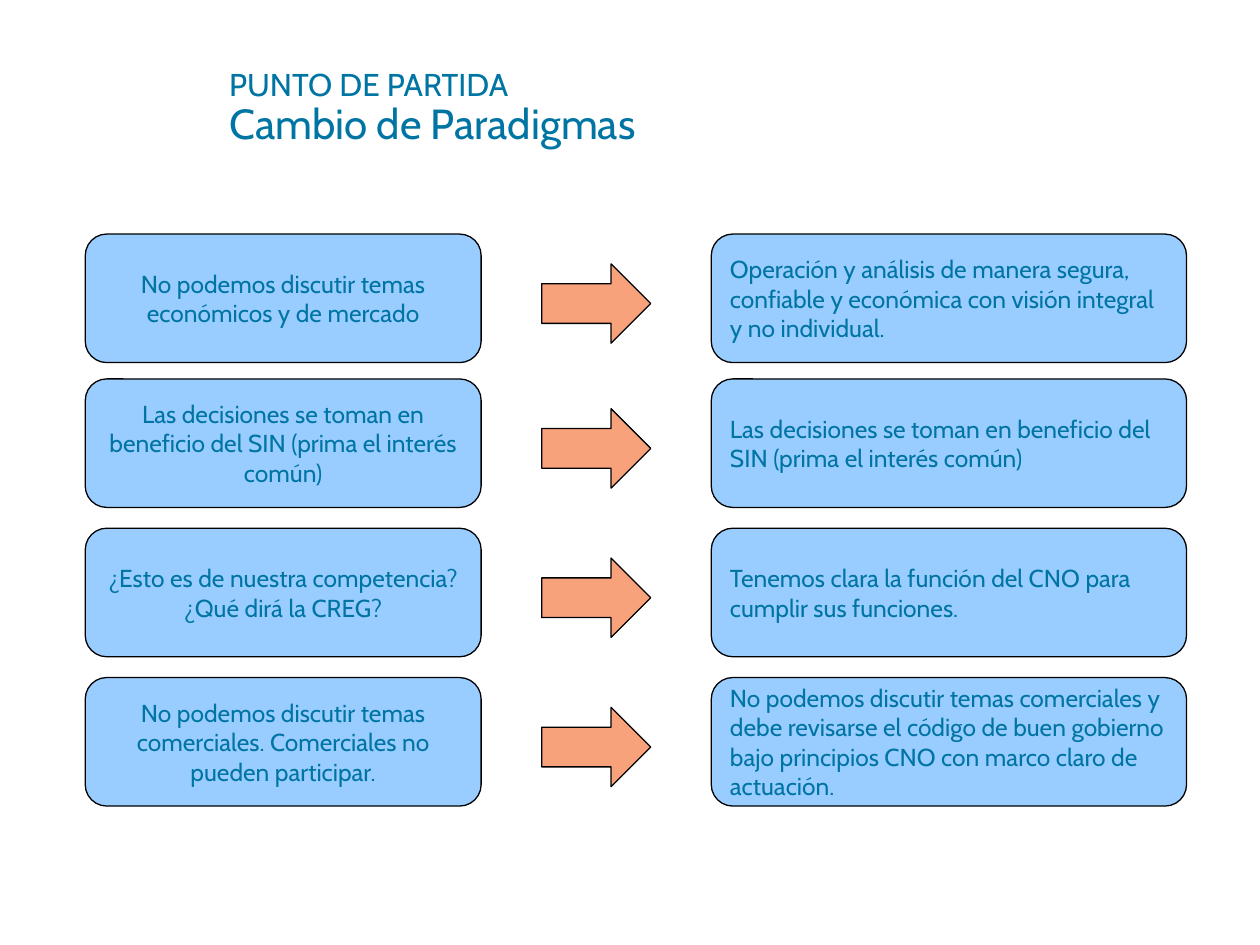
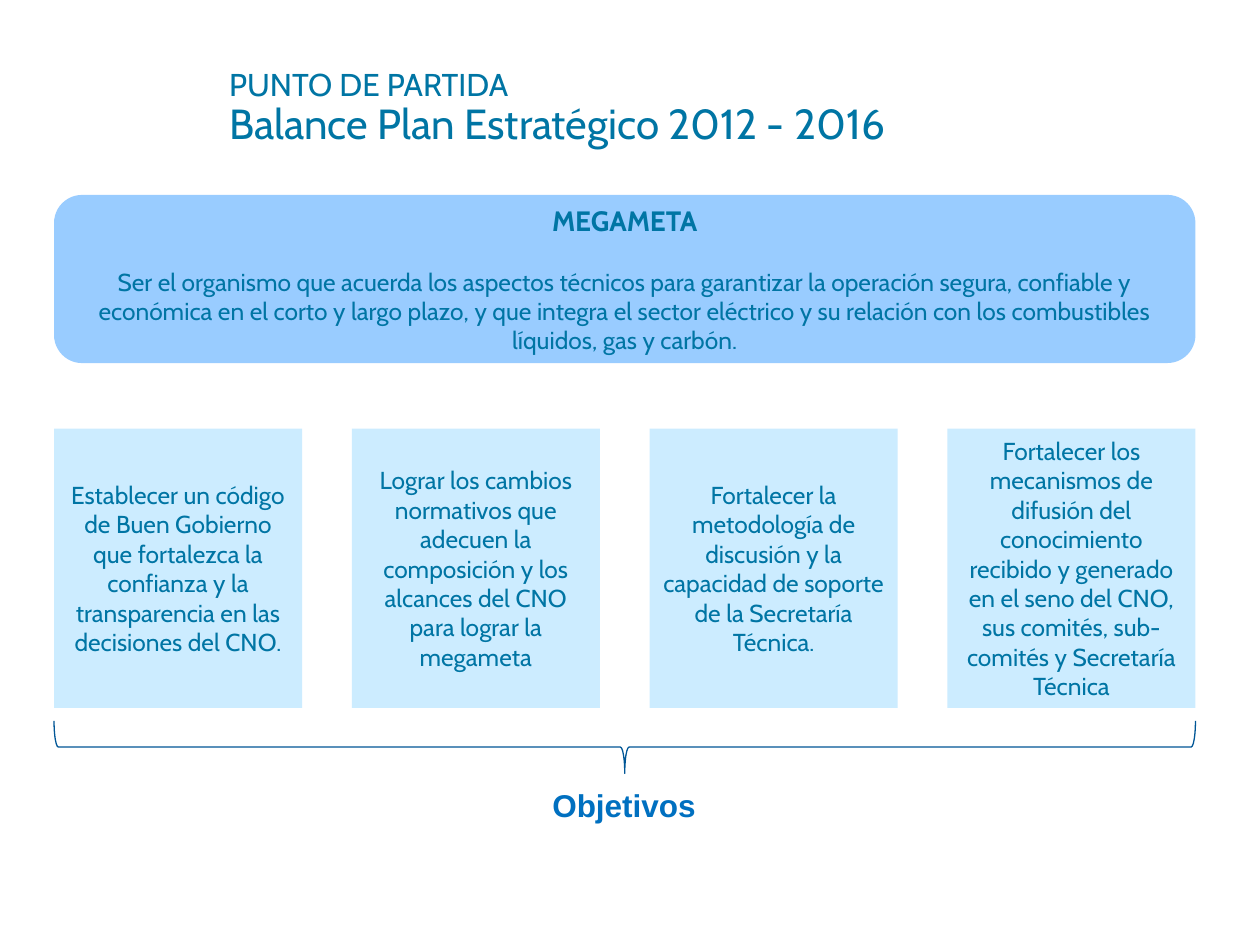
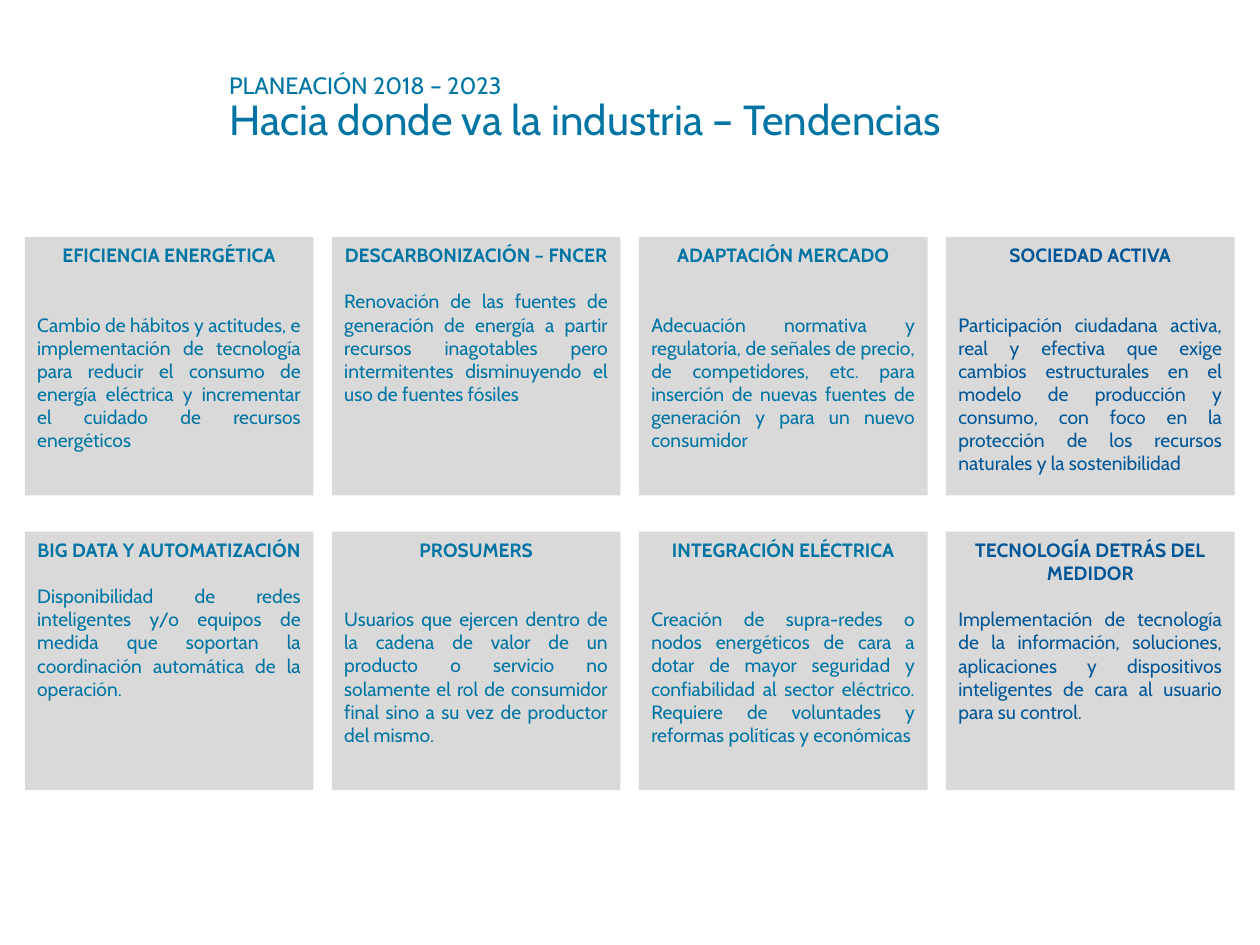
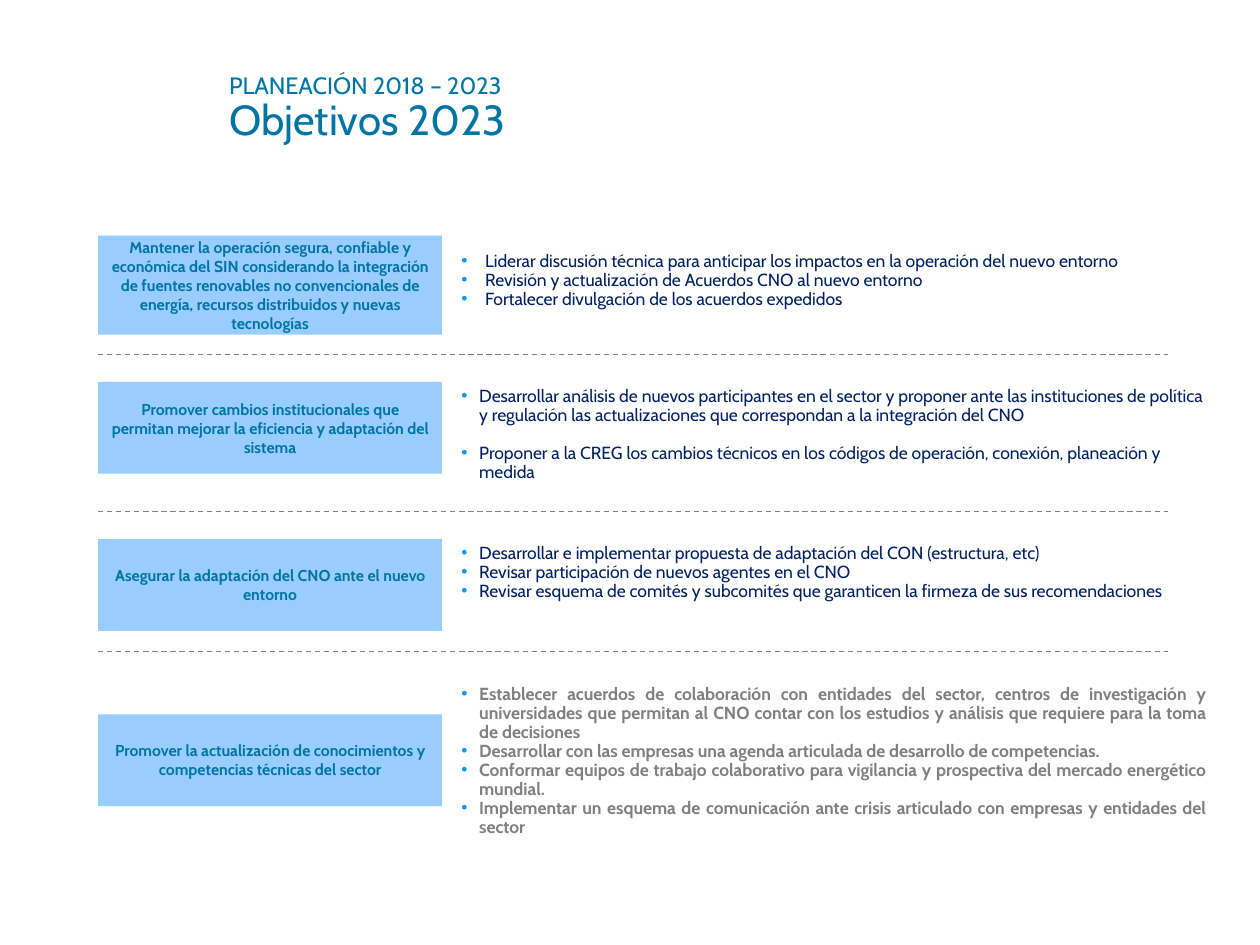
from dataclasses import dataclass

import pptx
import pptx.dml.color
import pptx.enum.dml
import pptx.enum.shapes
import pptx.enum.text
import pptx.oxml.ns
import pptx.util
from lxml import etree

Cm, Pt = pptx.util.Cm, pptx.util.Pt
SHAPES = pptx.enum.shapes.MSO_SHAPE
ANCHOR = pptx.enum.text.MSO_ANCHOR
ALIGN = pptx.enum.text.PP_ALIGN

# Shared look
FONT = "Cabin"
TEAL, BLUE, NAVY, GRAY = "0075A4", "005696", "002060", "808080"
SKY, PALE, SILVER, SALMON = "99CCFF", "CCECFF", "D9D9D9", "F8A27C"
TITLE_ONLY, FOUR_BODIES = 5, 4


@dataclass
class Box:
    """A region of the slide, in centimetres."""
    left: float
    top: float
    width: float
    height: float

    def lengths(self):
        return Cm(self.left), Cm(self.top), Cm(self.width), Cm(self.height)


TITLE_BOX = Box(4.62, 1.07, 17.91, 2.26)


# Shared helpers
def color(hex_value):
    return pptx.dml.color.RGBColor.from_string(hex_value)


def add_bullet(paragraph, indent):
    properties = paragraph._p.get_or_add_pPr()
    properties.set("marL", str(Cm(indent)))
    properties.set("indent", str(-Cm(indent)))
    qn = pptx.oxml.ns.qn
    bullet_color = etree.SubElement(properties, qn("a:buClr"))
    etree.SubElement(bullet_color, qn("a:srgbClr"), val="0099FF")
    etree.SubElement(properties, qn("a:buFont"), typeface="Arial")
    etree.SubElement(properties, qn("a:buChar"), char="•")


def write(shape, *paragraphs, anchor=ANCHOR.MIDDLE, insets=(0.25, 0.13), wrap=True, **shared):
    """Fill a shape with paragraphs, each a text or a (text, own format) pair."""
    frame = shape.text_frame
    frame.auto_size = pptx.enum.text.MSO_AUTO_SIZE.NONE
    frame.word_wrap = wrap
    frame.vertical_anchor = anchor
    frame.margin_left = frame.margin_right = Cm(insets[0])
    frame.margin_top = frame.margin_bottom = Cm(insets[1])
    for number, item in enumerate(paragraphs):
        text, own = (item, {}) if isinstance(item, str) else item
        style = {"size": 14, "font": FONT, "color": TEAL, "bold": False, "align": ALIGN.LEFT,
                 "spacing": 1.0, "before": 0, "indent": 0, **shared, **own}
        paragraph = frame.add_paragraph() if number else frame.paragraphs[0]
        if style["indent"]:
            add_bullet(paragraph, style["indent"])
        paragraph.alignment = style["align"]
        paragraph.line_spacing = style["spacing"]
        paragraph.space_before = Pt(style["before"])
        run = paragraph.add_run()
        run.text = text
        run.font.name = style["font"]
        run.font.size = Pt(style["size"])
        run.font.bold = style["bold"]
        run.font.color.rgb = color(style["color"])


def add_shape(slide, kind, box, fill=None, line=None):
    shape = slide.shapes.add_shape(kind, *box.lengths())
    shape.shadow.inherit = False
    if fill:
        shape.fill.solid()
        shape.fill.fore_color.rgb = color(fill)
    else:
        shape.fill.background()
    if line:
        shape.line.color.rgb = color(line)
        shape.line.width = Pt(0.75)
    else:
        shape.line.fill.background()
    return shape


def place(placeholder, box):
    placeholder.left, placeholder.top, placeholder.width, placeholder.height = box.lengths()
    return placeholder


def add_slide(deck, layout, section, heading, section_size):
    slide = deck.slides.add_slide(deck.slide_layouts[layout])
    write(place(slide.shapes.title, TITLE_BOX), (section, {"size": section_size}), heading,
          size=24, spacing=0.9, insets=(0, 0))
    return slide


# Slide 1: old paradigm, arrow, new paradigm
def paradigm_row(slide, box, old, new):
    old_box = Box(box.left, box.top, 7.98, box.height)
    arrow_box = Box(box.left + 9.2, box.top + 0.6, 2.2, 1.6)
    new_box = Box(box.left + 12.62, box.top, box.width - 12.62, box.height)
    for part, text, align in ((old_box, old, ALIGN.CENTER), (new_box, new, ALIGN.LEFT)):
        write(add_shape(slide, SHAPES.ROUNDED_RECTANGLE, part, SKY, "000000"), text, align=align)
    add_shape(slide, SHAPES.RIGHT_ARROW, arrow_box, SALMON, "000000")


def paradigms_slide(deck):
    slide = add_slide(deck, TITLE_ONLY, "PUNTO DE PARTIDA", "Cambio de Paradigmas", 18)
    rows = (
        (4.72, "No podemos discutir temas económicos y de mercado",
         "Operación y análisis de manera segura, confiable y económica con visión integral "
         "y no individual."),
        (7.64, "Las decisiones se toman en beneficio del SIN (prima el interés común)",
         "Las decisiones se toman en beneficio del SIN (prima el interés común)"),
        (10.65, "¿Esto es de nuestra competencia? ¿Qué dirá la CREG?",
         "Tenemos clara la función del CNO para cumplir sus funciones."),
        (13.66, "No podemos discutir temas comerciales. Comerciales no pueden participar.",
         "No podemos discutir temas comerciales y debe revisarse el código de buen gobierno "
         "bajo principios CNO con marco claro de actuación."),
    )
    for top, old, new in rows:
        paradigm_row(slide, Box(1.72, top, 22.2, 2.59), old, new)


# Slide 2: main goal, its objectives and the brace that sums them up
def megameta(slide, box):
    write(add_shape(slide, SHAPES.ROUNDED_RECTANGLE, box, SKY),
          ("MEGAMETA", {"size": 16, "bold": True}),
          ("Ser el organismo que acuerda los aspectos técnicos para garantizar la operación "
           "segura, confiable y económica en el corto y largo plazo, y que integra el sector "
           "eléctrico y su relación con los combustibles líquidos, gas y carbón.",
           {"before": 17}),
          align=ALIGN.CENTER)


def objective_cards(slide, box, objectives, card_width=5):
    step = (box.width - card_width) / (len(objectives) - 1)
    for column, objective in enumerate(objectives):
        card = Box(box.left + column * step, box.top, card_width, box.height)
        write(add_shape(slide, SHAPES.RECTANGLE, card, PALE), objective, align=ALIGN.CENTER)


def brace_below(slide, box, label):
    middle = box.left + box.width / 2
    upright = Box(middle - box.height / 2, box.top + box.height / 2 - box.width / 2,
                  box.height, box.width)
    add_shape(slide, SHAPES.LEFT_BRACE, upright, line=BLUE).rotation = 270
    label_box = Box(middle - 1.71, box.top + 1.19, 3.42, 1.02)
    write(slide.shapes.add_textbox(*label_box.lengths()), label, anchor=ANCHOR.TOP, wrap=False,
          font="Arial", size=18, bold=True, color="0070C0")


def balance_slide(deck):
    slide = add_slide(deck, TITLE_ONLY, "PUNTO DE PARTIDA",
                      "Balance Plan Estratégico 2012 - 2016", 18)
    left, width = 1.09, 23.01
    megameta(slide, Box(left, 3.93, width, 3.39))
    objective_cards(slide, Box(left, 8.64, width, 5.63), (
        "Establecer un código de Buen Gobierno que fortalezca la confianza y la transparencia "
        "en las decisiones del CNO.",
        "Lograr los cambios normativos que adecuen la composición y los alcances del CNO "
        "para lograr la megameta",
        "Fortalecer la metodología de discusión y la capacidad de soporte de la Secretaría "
        "Técnica.",
        "Fortalecer los mecanismos de difusión del conocimiento recibido y generado en el seno "
        "del CNO, sus comités, sub-comités y Secretaría Técnica",
    ))
    brace_below(slide, Box(left, 14.53, width, 1.06), "Objetivos")


# Slide 3: grid of trends
def trend_card(slide, box, heading, text, gap, ink):
    write(add_shape(slide, SHAPES.RECTANGLE, box, SILVER),
          (heading, {"bold": True, "align": ALIGN.CENTER}),
          (text, {"before": gap, "align": ALIGN.JUSTIFY}),
          anchor=ANCHOR.TOP, size=11, color=ink)


def trends_slide(deck):
    slide = add_slide(deck, TITLE_ONLY, "PLANEACIÓN 2018 – 2023",
                      "Hacia donde va la industria – Tendencias", 13.5)
    near, far = 13.2, 26.4
    trends = (
        ("EFICIENCIA ENERGÉTICA", far,
         "Cambio de hábitos y actitudes, e implementación de tecnología para reducir el consumo "
         "de energía eléctrica y incrementar el cuidado de recursos energéticos"),
        ("DESCARBONIZACIÓN – FNCER", near,
         "Renovación de las fuentes de generación de energía a partir recursos inagotables pero "
         "intermitentes disminuyendo el uso de fuentes fósiles"),
        ("ADAPTACIÓN MERCADO", far,
         "Adecuación normativa y regulatoria, de señales de precio, de competidores, etc. para "
         "inserción de nuevas fuentes de generación y para un nuevo consumidor"),
        ("SOCIEDAD ACTIVA", far,
         "Participación ciudadana activa, real y efectiva que exige cambios estructurales en el "
         "modelo de producción y consumo, con foco en la protección de los recursos naturales "
         "y la sostenibilidad"),
        ("BIG DATA Y AUTOMATIZACIÓN", near,
         "Disponibilidad de redes inteligentes y/o equipos de medida que soportan la "
         "coordinación automática de la operación."),
        ("PROSUMERS", far,
         "Usuarios que ejercen dentro de la cadena de valor de un producto o servicio no "
         "solamente el rol de consumidor final sino a su vez de productor del mismo."),
        ("INTEGRACIÓN ELÉCTRICA", far,
         "Creación de supra-redes o nodos energéticos de cara a dotar de mayor seguridad y "
         "confiabilidad al sector eléctrico. Requiere de voluntades y reformas políticas y "
         "económicas"),
        ("TECNOLOGÍA DETRÁS DEL MEDIDOR", near,
         "Implementación de tecnología de la información, soluciones, aplicaciones y "
         "dispositivos inteligentes de cara al usuario para su control."),
    )
    columns = 4
    for number, (heading, gap, text) in enumerate(trends):
        row, column = divmod(number, columns)
        card = Box(0.5 + column * 6.19, 4.78 + row * 5.94, 5.82, 5.21)
        trend_card(slide, card, heading, text, gap, BLUE if column == columns - 1 else TEAL)


# Slide 4: goals with their actions, parted by dashed rules
def goal(slide, box, text):
    write(add_shape(slide, SHAPES.RECTANGLE, box, SKY), text,
          size=9, bold=True, align=ALIGN.CENTER)


def action_list(placeholder, box, actions, **look):
    style = {"size": 10, "color": NAVY, "spacing": 0.9, "indent": 0.36, **look}
    write(place(placeholder, box), *actions, anchor=ANCHOR.TOP, insets=(0, 0.1), **style)


def dashed_rule(slide, left, right, height):
    rule = slide.shapes.add_connector(pptx.enum.shapes.MSO_CONNECTOR.STRAIGHT,
                                      Cm(left), Cm(height), Cm(right), Cm(height))
    rule.line.color.rgb = color(GRAY)
    rule.line.width = Pt(0.75)
    rule.line.dash_style = pptx.enum.dml.MSO_LINE.DASH
    etree.SubElement(rule._element.spPr, pptx.oxml.ns.qn("a:effectLst"))


def goals_slide(deck):
    slide = add_slide(deck, FOUR_BODIES, "PLANEACIÓN 2018 – 2023", "Objetivos 2023", 13.5)
    goal_left, goal_width, list_left = 1.98, 6.93, 9.3
    rows = (
        (Box(goal_left, 4.75, goal_width, 2),
         "Mantener la operación segura, confiable y económica del SIN considerando la "
         "integración de fuentes renovables no convencionales de energía, recursos distribuidos "
         "y nuevas tecnologías",
         Box(list_left, 4.98, 15.01, 1.35),
         ("Liderar discusión técnica para anticipar los impactos en la operación del nuevo "
          "entorno",
          "Revisión y actualización de Acuerdos CNO al nuevo entorno",
          "Fortalecer divulgación de los acuerdos expedidos"),
         {"indent": 0.48}),
        (Box(goal_left, 7.7, goal_width, 1.85),
         "Promover cambios institucionales que permitan mejorar la eficiencia y adaptación del "
         "sistema",
         Box(list_left, 7.7, 15.01, 2.03),
         ("Desarrollar análisis de nuevos participantes en el sector y proponer ante las "
          "instituciones de política y regulación las actualizaciones que correspondan a la "
          "integración del CNO",
          ("Proponer a la CREG los cambios técnicos en los códigos de operación, conexión, "
           "planeación y medida", {"before": 11})),
         {}),
        (Box(goal_left, 10.87, goal_width, 1.85),
         "Asegurar la adaptación del CNO ante el nuevo entorno",
         Box(list_left, 10.87, 15.19, 1.73),
         ("Desarrollar e implementar propuesta de adaptación del CON (estructura, etc)",
          "Revisar participación de nuevos agentes en el CNO",
          "Revisar esquema de comités y subcomités que garanticen la firmeza de sus "
          "recomendaciones"),
         {}),
        (Box(goal_left, 14.4, goal_width, 1.85),
         "Promover la actualización de conocimientos y competencias técnicas del sector",
         Box(list_left, 13.72, 15.01, 3.61),
         ("Establecer acuerdos de colaboración con entidades del sector, centros de "
          "investigación y universidades que permitan al CNO contar con los estudios y análisis "
          "que requiere para la toma de decisiones",
          "Desarrollar con las empresas una agenda articulada de desarrollo de competencias.",
          "Conformar equipos de trabajo colaborativo para vigilancia y prospectiva del mercado "
          "energético mundial.",
          "Implementar un esquema de comunicación ante crisis articulado con empresas y "
          "entidades del sector"),
         {"color": GRAY, "bold": True, "align": ALIGN.JUSTIFY}),
    )
    bodies = list(slide.placeholders)[1:]
    for body, (goal_box, goal_text, list_box, actions, look) in zip(bodies, rows):
        goal(slide, goal_box, goal_text)
        action_list(body, list_box, actions, **look)
    for height in (7.14, 10.31, 13.13):
        dashed_rule(slide, goal_left, 23.55, height)


def main():
    deck = pptx.Presentation()
    deck.slide_width, deck.slide_height = Cm(25.4), Cm(19.05)
    paradigms_slide(deck)
    balance_slide(deck)
    trends_slide(deck)
    goals_slide(deck)
    deck.save("out.pptx")


if __name__ == "__main__":
    main()
